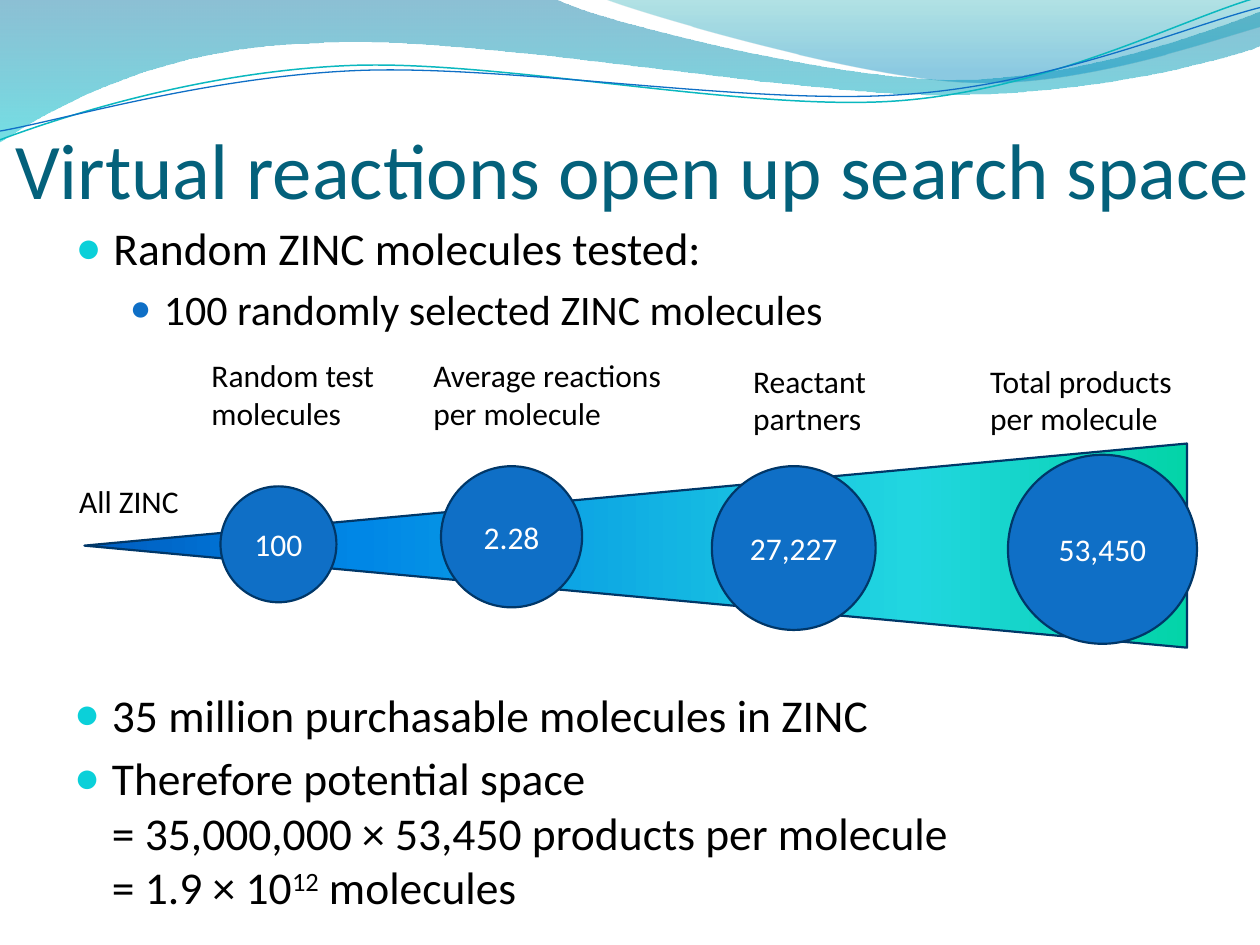
from math import cos, radians, sin

from lxml.etree import SubElement
from pptx import Presentation
from pptx.dml.color import RGBColor
from pptx.enum.shapes import MSO_SHAPE as Shape
from pptx.enum.text import MSO_ANCHOR as Anchor, MSO_AUTO_SIZE as AutoSize, PP_ALIGN as Align
from pptx.oxml import parse_xml
from pptx.oxml.ns import nsdecls, qn
from pptx.util import Pt

PX = 9144  # 100 px to the inch
FONT, BULLET_FONT = "Calibri", "Arial"
BLUE, NAVY, TEAL, AQUA = "0F6FC6", "003768", "0AB8BF", "0BD0D9"
TITLE, BLACK, WHITE = "04617B", "000000", "FFFFFF"
# Per list level: left indent, hanging indent, text size, bullet colour, bullet percent
LEVELS = [(30, 30, 26, AQUA, 95), (70, 27, 24, BLUE, 85)]


def px(value):
    return round(value * PX)


def color(value):
    return RGBColor.from_string(value)


def place(shape, left, top, width, height):
    shape.left, shape.top = px(left), px(top)
    shape.width, shape.height = px(width), px(height)


def set_line(shape, value, width):
    shape.line.color.rgb = color(value)
    shape.line.width = Pt(width)


def set_gradient(shape, stops, angle):
    """Fill with (position, colour, opacity) stops, all in percent; angle is clockwise."""
    marks = "".join(
        f'<a:gs pos="{position * 1000}"><a:srgbClr val="{value}">'
        f'<a:alpha val="{opacity * 1000}"/></a:srgbClr></a:gs>'
        for position, value, opacity in stops)
    shape.fill.background()
    properties = shape._element.spPr
    properties.replace(properties.find(qn("a:noFill")), parse_xml(
        f'<a:gradFill {nsdecls("a")} rotWithShape="1"><a:gsLst>{marks}</a:gsLst>'
        f'<a:lin ang="{angle * 60000}" scaled="0"/></a:gradFill>'))


def set_bullet(paragraph, level):
    left, hanging, _, value, percent = LEVELS[level]
    paragraph.level = level
    properties = paragraph._p.get_or_add_pPr()
    properties.set("marL", str(px(left)))
    properties.set("indent", str(-px(hanging)))
    SubElement(SubElement(properties, qn("a:buClr")), qn("a:srgbClr")).set("val", value)
    SubElement(properties, qn("a:buSzPct")).set("val", str(percent * 1000))
    SubElement(properties, qn("a:buFont")).set("typeface", BULLET_FONT)
    SubElement(properties, qn("a:buChar")).set("char", "●")


def write_text(shape, paragraphs, size=18, fill=BLACK, align=Align.LEFT, anchor=Anchor.TOP,
               wrap=True, fit=AutoSize.NONE, margins=(10, 5, 10, 5), levels=None):
    """Each paragraph is a list of parts; every second part is superscript."""
    frame = shape.text_frame
    frame.word_wrap, frame.auto_size, frame.vertical_anchor = wrap, fit, anchor
    (frame.margin_left, frame.margin_top,
     frame.margin_right, frame.margin_bottom) = map(px, margins)
    for index, parts in enumerate(paragraphs):
        paragraph = frame.add_paragraph() if index else frame.paragraphs[0]
        paragraph.alignment = align
        text_size = size
        if levels:
            set_bullet(paragraph, levels[index])
            text_size = LEVELS[levels[index]][2]
        paragraph.space_before = Pt(text_size * 0.2 if levels and index else 0)
        for part_index, part in enumerate(parts):
            for line_index, line in enumerate(part.split("\n")):
                if line_index:
                    paragraph.add_line_break()
                run = paragraph.add_run()
                run.text = line
                run.font.name, run.font.size = FONT, Pt(text_size)
                run.font.color.rgb = color(fill)
                if part_index % 2:
                    run.font._element.set("baseline", "30000")


def add_label(slide, box, paragraphs, **options):
    write_text(slide.shapes.add_textbox(*map(px, box)), paragraphs, **options)


def turn(point, center, degrees):
    x, y = point[0] - center[0], point[1] - center[1]
    c, s = cos(radians(degrees)), sin(radians(degrees))
    return center[0] + x * c - y * s, center[1] + x * s + y * c


def add_outline(slide, box, start, segments, close=False, center=(0, 0), rotation=0):
    """A segment of one point is a straight line; one of three is a cubic curve."""
    def spot(point):
        x, y = turn(point, center, -rotation)
        return px(box[0] + x), px(box[1] + y)

    builder = slide.shapes.build_freeform(*spot(start))
    builder.add_line_segments([spot(p) for segment in segments for p in segment], close=close)
    shape = builder.convert_to_shape()
    shape.shadow.inherit = False
    shape.rotation = rotation
    # Join each three points into one curve
    lines = list(shape._element.iter(qn("a:lnTo")))
    for segment in segments:
        group, lines = lines[:len(segment)], lines[len(segment):]
        if len(group) == 3:
            group[0].tag = qn("a:cubicBezTo")
            for line in group[1:]:
                group[0].append(line[0])
                line.getparent().remove(line)
    return shape


def add_waves(slide, box):
    # Wide band, then the lighter sweep at the right
    bands = [
        ((0, 0), [
            [(440, -1)],
            [(476, 17), (664, 63), (758, 63)], [(853, 63), (958, 26), (1000, 9)],
            [(1001, 36)],
            [(983, 44), (870, 76), (746, 75)], [(622, 75), (382, 28), (257, 34)],
            [(129, 36), (46, 83), (-1, 113)]],
         [(0, "0074A1", 45), (100, "00C6CF", 55)]),
        ((479, -1), [
            [(509, 11), (682, 62), (769, 65)], [(856, 69), (961, 32), (1000, 21)],
            [(1000, 0)]],
         [(0, "00A1A9", 30), (80, "008BBF", 45)]),
    ]
    for start, segments, stops in bands:
        shape = add_outline(slide, box, start, segments, close=True)
        set_gradient(shape, stops, 90)
        shape.line.fill.background()
    # Two thin waves, slightly turned
    strands = [
        (TEAL, 0.85, (499, 57.5), (0, 111), [
            [(48, 93), (158, 57), (277, 52)], [(395, 47), (593, 89), (713, 80)],
            [(833, 71), (938, 15), (998, -2)]]),
        (BLUE, 0.75, (499.5, 59), (0, 104), [
            [(47, 96), (164, 61), (283, 56)], [(403, 51), (597, 84), (717, 75)],
            [(836, 67), (941, 21), (1000, 6)]]),
    ]
    for value, width, center, start, segments in strands:
        shape = add_outline(slide, box, start, segments, center=center, rotation=357.3)
        shape.fill.background()
        set_line(shape, value, width)


def add_funnel(slide, box):
    left, top = box[:2]
    # Triangle turned so that its tip points left
    wedge_length, wedge_height, wedge_left, wedge_middle = 875, 162, 14, 155
    triangle = slide.shapes.add_shape(Shape.ISOSCELES_TRIANGLE, 0, 0, 0, 0)
    place(triangle, left + wedge_left + (wedge_length - wedge_height) / 2,
          top + wedge_middle - wedge_length / 2, wedge_height, wedge_length)
    triangle.rotation = 270
    triangle.shadow.inherit = False
    set_gradient(triangle, [(0, "03D4A8", 100), (25, "21D6E0", 100),
                            (75, "0087E6", 100), (100, "005CBF", 100)], 270)
    set_line(triangle, NAVY, 1.25)

    # Stages: circle left, top, diameter and value, then label box and lines
    stages = [
        (122, 108, 92, "100", (105, 0, 151, 71), [["Random test"], ["molecules"]]),
        (297, 92, 112, "2.28", (281, 0, 208, 71), [["Average reactions"], ["per molecule"]]),
        (512, 92, 130, "27,227", (535, 4, 116, 71), [["Reactant \npartners"]]),
        (747, 83, 150, "53,450", (723, 4, 166, 71), [["Total products"], ["per molecule"]]),
    ]
    labels = [stage[4:] for stage in stages] + [((0, 100, 100, 40), [["All ZINC"]])]
    for x, y, diameter, value, *_ in stages:
        circle = slide.shapes.add_shape(Shape.OVAL, 0, 0, 0, 0)
        place(circle, left + x, top + y, diameter, diameter)
        circle.shadow.inherit = False
        circle.fill.solid()
        circle.fill.fore_color.rgb = color(BLUE)
        set_line(circle, NAVY, 1.25)
        write_text(circle, [[value]], fill=WHITE, align=Align.CENTER, anchor=Anchor.MIDDLE,
                   margins=(0, 5, 0, 5))
    for (x, y, width, height), lines in labels:
        add_label(slide, (left + x, top + y, width, height), lines,
                  wrap=False, fit=AutoSize.SHAPE_TO_FIT_TEXT)


def add_title(slide, box):
    title = slide.shapes.title
    place(title, *box)
    write_text(title, [["Virtual reactions open up search space"]], size=45, fill=TITLE,
               anchor=Anchor.BOTTOM, margins=(0, 5, 0, 0))


def add_sample_list(slide, box):
    body = slide.placeholders[1]
    place(body, *box)
    write_text(body, [["Random ZINC molecules tested:"],
                      ["100 randomly selected ZINC molecules"]], levels=[0, 1])


def add_conclusions(slide, box):
    add_label(slide, box, [
        ["35 million purchasable molecules in ZINC"],
        ["Therefore potential space \n= 35,000,000 × 53,450 products per molecule\n= 1.9 × 10",
         "12", " molecules"]], levels=[0, 0])


def main():
    presentation = Presentation()
    presentation.slide_width, presentation.slide_height = px(1000), px(750)
    slide = presentation.slides.add_slide(presentation.slide_layouts[1])
    add_waves(slide, (0, 0, 1000, 113))
    add_title(slide, (12, 101, 1047, 70))
    add_sample_list(slide, (50, 170, 900, 117))
    add_funnel(slide, (53, 278, 897, 236))
    add_conclusions(slide, (49, 540, 900, 186))
    presentation.save("out.pptx")


if __name__ == "__main__":
    main()
